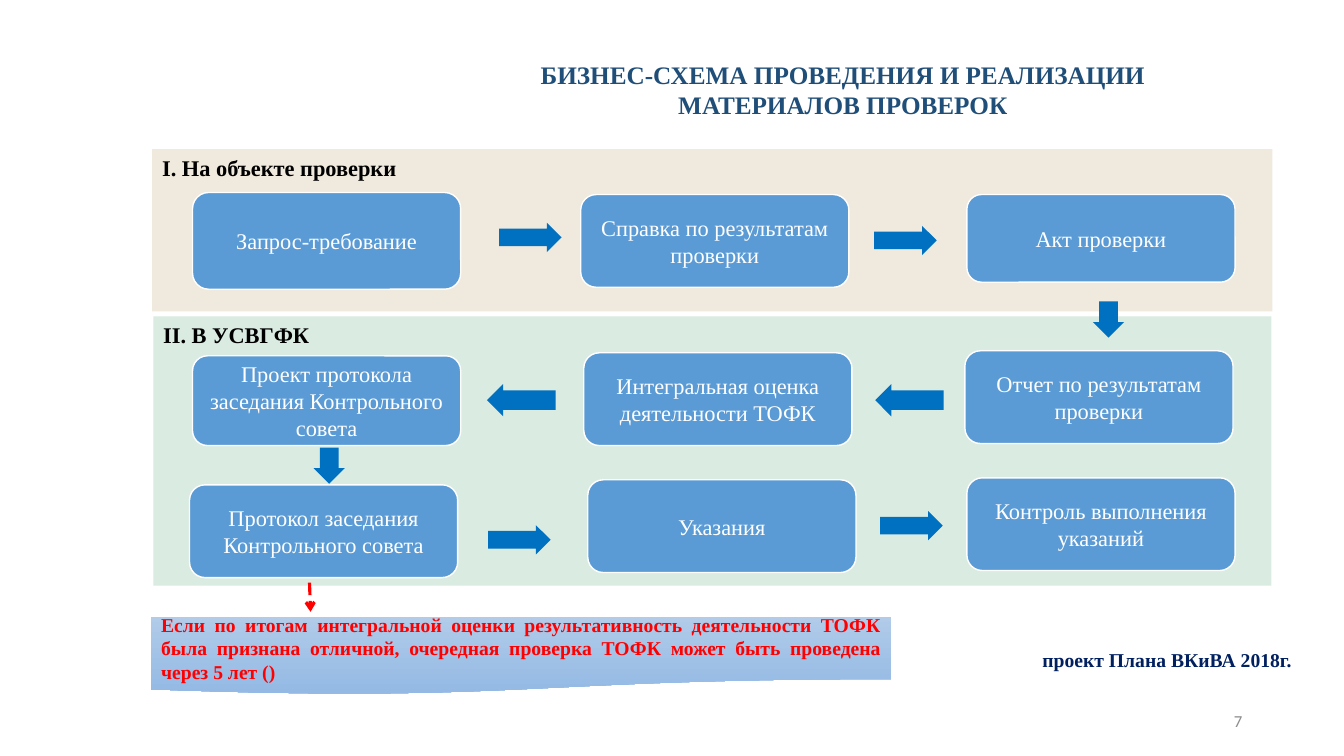
"""Build the slide with the business scheme of inspections."""
import pptx
import pptx.util
import pptx.dml.color
import pptx.enum.dml
import pptx.enum.shapes
import pptx.enum.text
import pptx.oxml
from pptx.oxml.ns import qn

Inches = pptx.util.Inches
Shapes = pptx.enum.shapes.MSO_SHAPE
Align = pptx.enum.text.PP_ALIGN
Anchor = pptx.enum.text.MSO_ANCHOR

SERIF = "Times New Roman"
STEP_BLUE, ARROW_BLUE, RED = "5B9BD5", "0070C0", "FF0000"
STEP_WIDTH = 2.66

TITLE = "БИЗНЕС-СХЕМА ПРОВЕДЕНИЯ И РЕАЛИЗАЦИИ МАТЕРИАЛОВ ПРОВЕРОК"
NOTE = ("Если по итогам интегральной оценки результативность деятельности ТОФК "
        "была признана отличной, очередная проверка ТОФК может быть проведена "
        "через 5 лет ()")
STAGES = [
    ("I. На объекте проверки", (1.51, 1.48, 11.11, 1.61), "9C711C"),
    ("II. В УСВГФК", (1.52, 3.14, 11.09, 2.67), "077A3E"),
]
STEPS = [
    ("Запрос-требование", 1.91, 1.91, 0.96),
    ("Справка по результатам проверки", 5.76, 1.93, 0.92),
    ("Акт проверки", 9.59, 1.93, 0.87),
    ("Проект протокола заседания Контрольного совета", 1.91, 3.53, 0.89),
    ("Интегральная оценка деятельности ТОФК", 5.79, 3.5, 0.92),
    ("Отчет по результатам проверки", 9.57, 3.48, 0.92),
    ("Протокол заседания Контрольного совета", 1.88, 4.81, 0.92),
    ("Указания", 5.83, 4.76, 0.92),
    ("Контроль выполнения указаний", 9.59, 4.74, 0.92),
]
ARROWS = [
    (Shapes.RIGHT_ARROW, (0.62, 0.29),
     [(4.95, 2.21), (8.67, 2.24), (4.84, 5.21), (8.73, 5.07)]),
    (Shapes.LEFT_ARROW, (0.68, 0.32), [(8.68, 3.81), (4.83, 3.81)]),
    (Shapes.DOWN_ARROW, (0.31, 0.36), [(10.84, 2.99), (3.11, 4.44)]),
]


def rgb(value):
    return pptx.dml.color.RGBColor.from_string(value)


def write(shape, text, size, color, bold=False, align=Align.LEFT,
          anchor=Anchor.TOP, font=SERIF, wrap=True):
    frame = shape.text_frame
    frame.word_wrap = wrap
    frame.auto_size = pptx.enum.text.MSO_AUTO_SIZE.NONE
    frame.vertical_anchor = anchor
    para = frame.paragraphs[0]
    para.alignment = align
    span = para.add_run()
    span.text = text
    span.font.name = font
    span.font.size = pptx.util.Pt(size)
    span.font.bold = bold
    span.font.color.rgb = rgb(color)


def add_shape(slide, kind, place, fill=None, line=None):
    shape = slide.shapes.add_shape(kind, *map(Inches, place))
    shape.shadow.inherit = False
    if fill:
        shape.fill.solid()
        shape.fill.fore_color.rgb = rgb(fill)
    if line:
        shape.line.color.rgb = rgb(line)
        shape.line.width = pptx.util.Pt(1)
    else:
        shape.line.fill.background()
    return shape


def add_label(slide, place, *args, **options):
    box = slide.shapes.add_textbox(*map(Inches, place))
    write(box, *args, **options)


def add_stage(slide, heading, place, tint):
    panel = add_shape(slide, Shapes.RECTANGLE, place, tint)
    color = panel.fill._xPr.find(qn("a:solidFill"))[0]
    color.append(pptx.oxml.parse_xml(
        '<a:alpha xmlns:a="http://schemas.openxmlformats.org/drawingml/2006/main" val="15000"/>'))
    write(panel, heading, 16, "000000", bold=True)


def add_note(slide):
    note = add_shape(slide, Shapes.FLOWCHART_DOCUMENT, (1.5, 6.12, 7.34, 0.77))
    note.fill.gradient()
    note.fill.gradient_angle = 270
    for stop, color in zip(note.fill.gradient_stops, ("B1CBE9", "93B9E4")):
        stop.color.rgb = rgb(color)
    write(note, NOTE, 14, RED, bold=True, align=Align.JUSTIFY, anchor=Anchor.MIDDLE)


def add_note_link(slide):
    link = slide.shapes.add_connector(
        pptx.enum.shapes.MSO_CONNECTOR.STRAIGHT, *map(Inches, (3.07, 5.78, 3.08, 6.07)))
    link.line.color.rgb = rgb(RED)
    link.line.width = pptx.util.Pt(2.25)
    link.line.dash_style = pptx.enum.dml.MSO_LINE.DASH
    outline = link.line._get_or_add_ln()
    outline.append(outline.makeelement(qn("a:tailEnd"), {"type": "arrow"}))
    properties = outline.getparent()
    properties.append(properties.makeelement(qn("a:effectLst"), {}))


def main():
    deck = pptx.Presentation()
    deck.slide_width, deck.slide_height = Inches(13.33), Inches(7.5)
    slide = deck.slides.add_slide(deck.slide_layouts[5])

    title = slide.shapes.title
    title.left, title.top, title.width, title.height = map(Inches, (4.5, 0.54, 7.72, 0.71))
    write(title, TITLE, 18, "1F4E79", bold=True, align=Align.CENTER)

    for stage in STAGES:
        add_stage(slide, *stage)
    for text, left, top, height in STEPS:
        step = add_shape(slide, Shapes.FLOWCHART_ALTERNATE_PROCESS,
                         (left, top, STEP_WIDTH, height), STEP_BLUE, "FFFFFF")
        write(step, text, 16, "FFFFFF", align=Align.CENTER, anchor=Anchor.MIDDLE)
    for kind, size, corners in ARROWS:
        for corner in corners:
            arrow = add_shape(slide, kind, corner + size, ARROW_BLUE)
            arrow.adjustments[0] = 0.6
            arrow.adjustments[1] = 0.5

    add_note(slide)
    add_note_link(slide)
    add_label(slide, (10.24, 6.38, 2.7, 0.34), "проект Плана ВКиВА 2018г.",
              14, "002060", bold=True, wrap=False)
    add_label(slide, (9.42, 6.95, 3, 0.4), "7", 12, "8C8C8C",
              align=Align.RIGHT, anchor=Anchor.MIDDLE, font="Calibri")
    deck.save("out.pptx")


if __name__ == "__main__":
    main()
